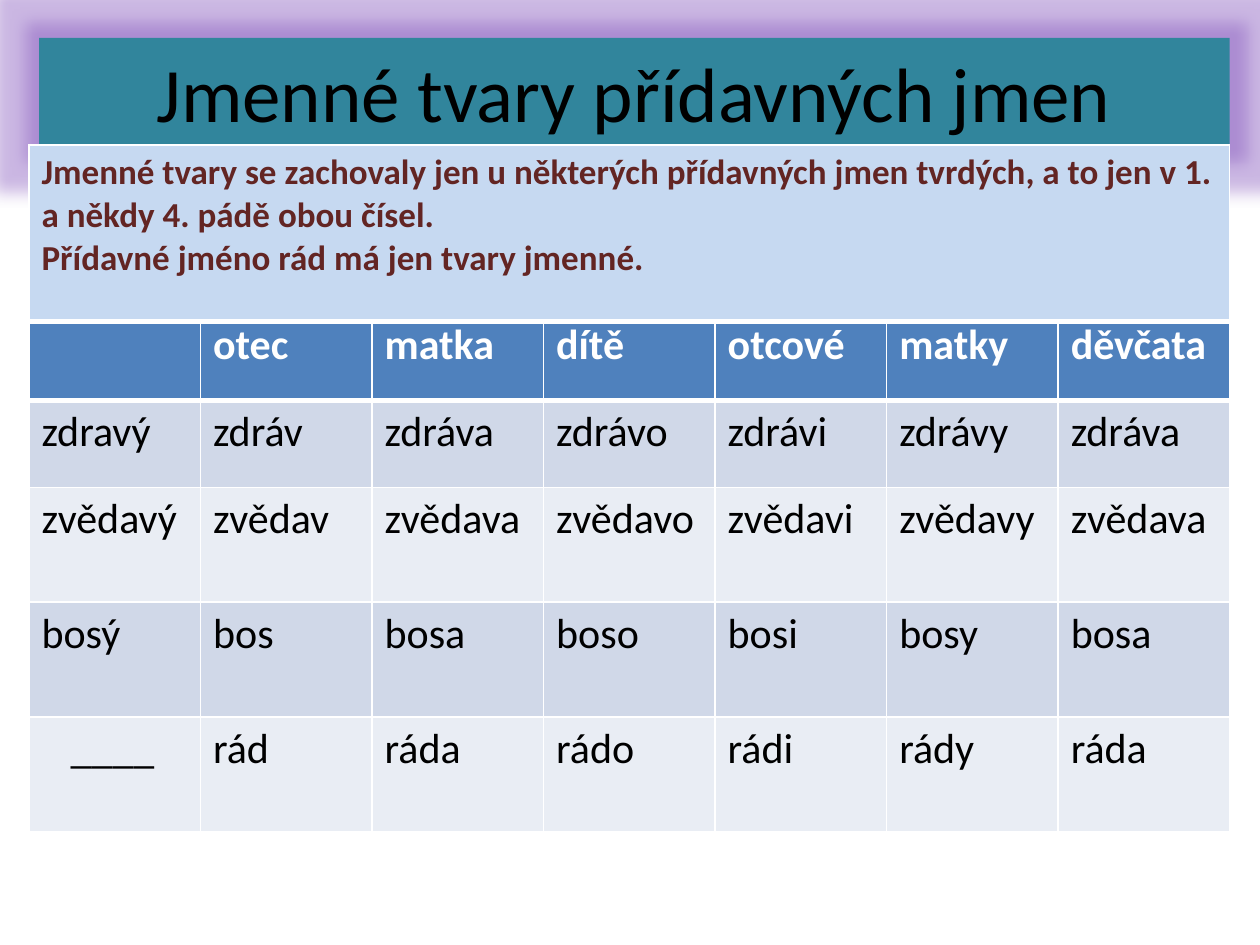
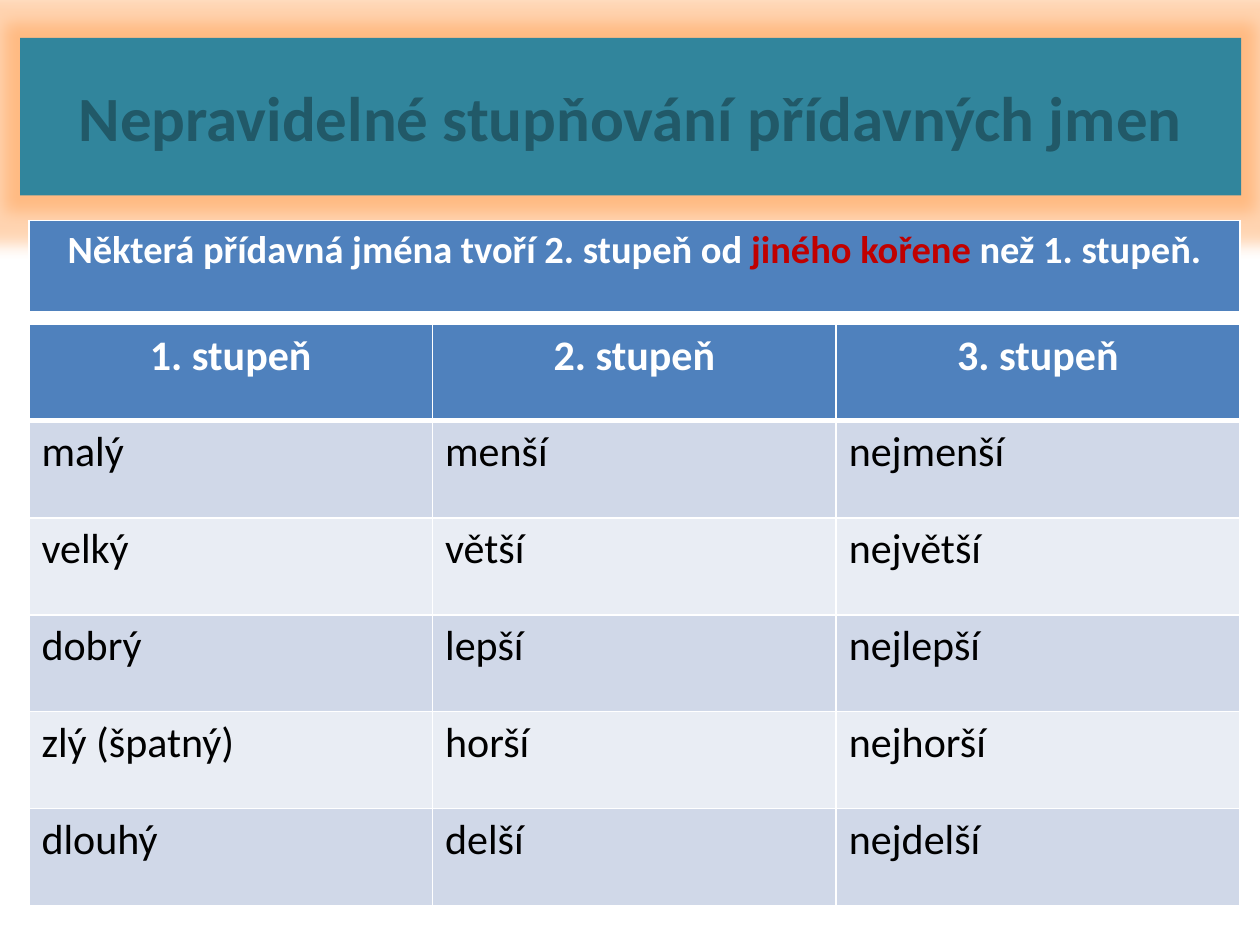
import pptx
import pptx.util
import pptx.dml.color
import pptx.enum.shapes
import pptx.enum.text
import pptx.oxml
import pptx.oxml.ns
from lxml import etree

# Content: each run is (text, colour), each paragraph a list of runs
MAROON, WHITE, RED, BLACK = "632523", "FFFFFF", "C00000", "000000"
BLUE, PALE_BLUE, TEAL = "4F81BD", "C6D9F1", "31859C"
BANDS = ("D0D8E8", "E9EDF4")
FONT = "Calibri"
BLANK_MARK = "____"

SLIDES = [
    {
        "title": "Jmenné tvary přídavných jmen",
        "title_box": (0.31, 0.3, 9.45, 0.85),
        "title_style": (44, BLACK, False), "glow": "8064A2",
        "note": [
            [("Jmenné tvary se zachovaly jen u některých přídavných jmen tvrdých, "
              "a to jen v 1. a někdy 4. pádě obou čísel.", MAROON)],
            [("Přídavné jméno rád má jen tvary jmenné.", MAROON)],
        ],
        "note_box": (1.15, 1.4), "note_size": 20,
        "note_fill": PALE_BLUE, "centred": False,
        "width": 9.53, "grid_top": 2.49,
        "row_heights": [0.69, 0.69, 0.91, 0.91, 0.91],
        "grid": [
            ["", "otec", "matka", "dítě", "otcové", "matky", "děvčata"],
            ["zdravý", "zdráv", "zdráva", "zdrávo", "zdrávi", "zdrávy", "zdráva"],
            ["zvědavý", "zvědav", "zvědava", "zvědavo", "zvědavi", "zvědavy", "zvědava"],
            ["bosý", "bos", "bosa", "boso", "bosi", "bosy", "bosa"],
            [BLANK_MARK, "rád", "ráda", "rádo", "rádi", "rády", "ráda"],
        ],
    },
    {
        "title": "Nepravidelné stupňování přídavných jmen",
        "title_box": (0.16, 0.3, 9.69, 1.25),
        "title_style": (36, "215968", True), "glow": "F79646",
        "note": [[("Některá přídavná jména tvoří 2. stupeň od ", WHITE),
                  ("jiného kořene", RED), (" než 1. stupeň.", WHITE)]],
        "note_box": (1.75, 0.74), "note_size": 22,
        "note_fill": BLUE, "centred": True,
        "width": 9.61, "grid_top": 2.57,
        "row_heights": [0.77] * 6,
        "grid": [
            ["1. stupeň", "2. stupeň", "3. stupeň"],
            ["malý", "menší", "nejmenší"],
            ["velký", "větší", "největší"],
            ["dobrý", "lepší", "nejlepší"],
            ["zlý (špatný)", "horší", "nejhorší"],
            ["dlouhý", "delší", "nejdelší"],
        ],
    },
]
LEFT = 0.23
GRID_SIZE = 24
THIN, THICK = 1, 3
CENTER = pptx.enum.text.PP_ALIGN.CENTER
Inches = pptx.util.Inches


def rgb(colour):
    return pptx.dml.color.RGBColor.from_string(colour)


def write(tf, paragraphs, size, bold, centred):
    for i, runs in enumerate(paragraphs):
        p = tf.add_paragraph() if i else tf.paragraphs[0]
        if centred:
            p.alignment = CENTER
        for text, colour in runs:
            r = p.add_run()
            r.text = text
            r.font.name, r.font.size, r.font.bold = FONT, pptx.util.Pt(size), bold
            r.font.color.rgb = rgb(colour)


def set_borders(cell, top, bottom):
    tcPr = cell._tc.get_or_add_tcPr()
    sides = (("lnL", THIN), ("lnR", THIN), ("lnT", top), ("lnB", bottom))
    for i, (tag, width) in enumerate(sides):
        tcPr.insert(i, pptx.oxml.parse_xml(
            f'<a:{tag} {pptx.oxml.ns.nsdecls("a")} w="{pptx.util.Pt(width)}">'
            f'<a:solidFill><a:srgbClr val="{WHITE}"/></a:solidFill></a:{tag}>'))


def fill_cell(cell, paragraphs, size, fill, bold, centred, top=THIN, bottom=THIN):
    cell.fill.solid()
    cell.fill.fore_color.rgb = rgb(fill)
    set_borders(cell, top, bottom)
    write(cell.text_frame, paragraphs, size, bold, centred)


def add_table(s, top, width, heights, columns):
    table = s.shapes.add_table(len(heights), columns, Inches(LEFT), Inches(top),
                               Inches(width), Inches(sum(heights))).table
    for row, height in zip(table.rows, heights):
        row.height = Inches(height)
    for column in table.columns:
        column.width = Inches(width / columns)
    return table


def add_title(s, data):
    sp = s.shapes.add_shape(pptx.enum.shapes.MSO_SHAPE.RECTANGLE,
                            *map(Inches, data["title_box"]))
    sp.fill.solid()
    sp.fill.fore_color.rgb = rgb(TEAL)
    sp.line.fill.background()
    sp.shadow.inherit = False
    # Soft glow around the title band
    effects = sp._element.spPr.find(pptx.oxml.ns.qn("a:effectLst"))
    glow = etree.SubElement(effects, pptx.oxml.ns.qn("a:glow"), rad="228600")
    colour = etree.SubElement(glow, pptx.oxml.ns.qn("a:srgbClr"), val=data["glow"])
    for tag, val in (("a:satMod", "175000"), ("a:alpha", "40000")):
        etree.SubElement(colour, pptx.oxml.ns.qn(tag), val=val)
    tf = sp.text_frame
    tf.word_wrap = True
    tf.vertical_anchor = pptx.enum.text.MSO_ANCHOR.MIDDLE
    size, text_colour, bold = data["title_style"]
    write(tf, [[(data["title"], text_colour)]], size, bold, True)


def add_grid(s, data):
    grid = data["grid"]
    table = add_table(s, data["grid_top"], data["width"], data["row_heights"], len(grid[0]))
    for i, words in enumerate(grid):
        header = i == 0
        for j, word in enumerate(words):
            cell = table.cell(i, j)
            runs = [(word, WHITE if header else BLACK)] if word else []
            fill_cell(cell, [runs], GRID_SIZE,
                      BLUE if header else BANDS[(i - 1) % 2],
                      header, header and data["centred"],
                      top=THICK if i == 1 else THIN,
                      bottom=THICK if header else THIN)
            if word == BLANK_MARK:
                cell.margin_left = Inches(0.33)


def add_note(s, data):
    top, height = data["note_box"]
    table = add_table(s, top, data["width"], [height], 1)
    fill_cell(table.cell(0, 0), data["note"], data["note_size"],
              data["note_fill"], True, data["centred"], bottom=THICK)


def main():
    prs = pptx.Presentation()
    prs.slide_width, prs.slide_height = Inches(10), Inches(7.5)
    for data in SLIDES:
        s = prs.slides.add_slide(prs.slide_layouts[6])
        add_title(s, data)
        add_grid(s, data)
        add_note(s, data)
    prs.save("out.pptx")


if __name__ == "__main__":
    main()
